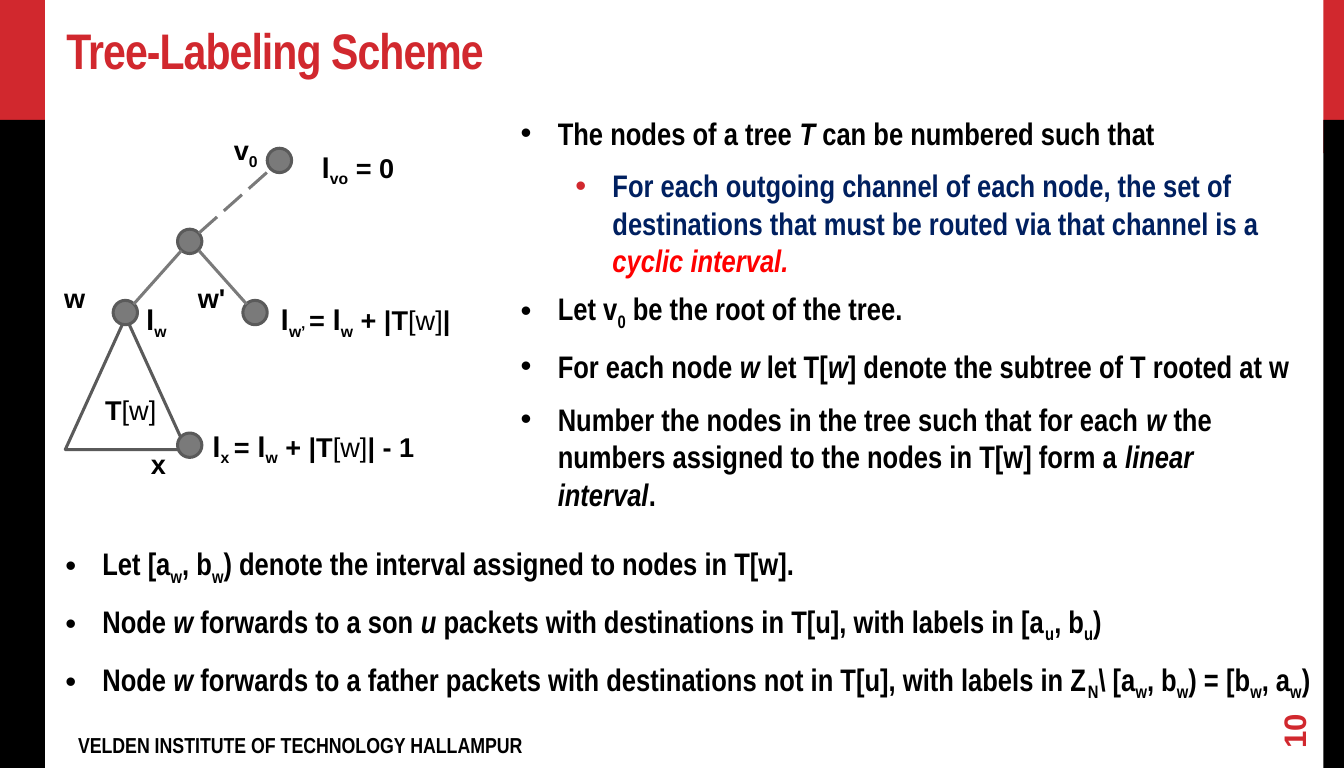
from itertools import groupby

from lxml import etree
from pptx import Presentation
from pptx.dml.color import RGBColor
from pptx.enum import dml, shapes, text
from pptx.oxml.ns import qn
from pptx.util import Inches, Pt

RED = RGBColor(0xD1, 0x28, 0x2E)
BRIGHT_RED = RGBColor(0xFF, 0x00, 0x00)
NAVY = RGBColor(0x00, 0x20, 0x60)
BLACK = RGBColor(0x00, 0x00, 0x00)
NODE_GRAY = RGBColor(0x7A, 0x7A, 0x7A)
OUTLINE_GRAY = RGBColor(0x5A, 0x5A, 0x5A)

SUBSCRIPT, ITALIC, REGULAR, NOTO, HIGHLIGHT = MARKS = "~*^@!"


def add_text_box(box, margins=(0.11, 0.06), wrap=True, anchor=text.MSO_ANCHOR.TOP):
    shape = slide.shapes.add_textbox(*map(Inches, box))
    frame = shape.text_frame
    frame.word_wrap = wrap
    frame.vertical_anchor = anchor
    frame.margin_left = frame.margin_right = Inches(margins[0])
    frame.margin_top = frame.margin_bottom = Inches(margins[1])
    return shape


def add_runs(paragraph, marked, size, font="Arial Narrow", color=BLACK):
    active = set()
    for is_mark, characters in groupby(marked, lambda character: character in MARKS):
        piece = "".join(characters)
        if is_mark:
            active ^= set(piece)
            continue
        run = paragraph.add_run()
        run.text = piece
        run.font.size = Pt(size)
        run.font.name = "Noto Sans" if NOTO in active else font
        run.font.bold = REGULAR not in active
        run.font.italic = ITALIC in active
        run.font.color.rgb = BRIGHT_RED if HIGHLIGHT in active else color
        if SUBSCRIPT in active:
            run.font._element.set("baseline", "-25000")


presentation = Presentation()
presentation.slide_width = Pt(992.25)
presentation.slide_height = Pt(567)
slide = presentation.slides.add_slide(presentation.slide_layouts[6])

for left, width in ((13.57, 0.22), (0, 0.46)):
    for top, height, color in ((0, 1.57, RED), (1.23, 6.65, BLACK)):
        band = slide.shapes.add_shape(
            shapes.MSO_SHAPE.RECTANGLE, *map(Inches, (left, top, width, height)))
        band.shadow.inherit = False
        band.fill.solid()
        band.fill.fore_color.rgb = color
        band.line.fill.background()

title = add_text_box((0.57, 0.18, 12.86, 0.7), anchor=text.MSO_ANCHOR.BOTTOM)
add_runs(title.text_frame.paragraphs[0], "Tree-Labeling Scheme", 36.9, color=RED)
title.text_frame.paragraphs[0].runs[0].font._element.set("spc", "-70")

footer = add_text_box((0.69, 7.44, 8.38, 0.34))
add_runs(footer.text_frame.paragraphs[0], "VELDEN INSTITUTE OF TECHNOLOGY HALLAMPUR", 16)

page_number = add_text_box((12.86, 7.21, 0.81, 0.34), anchor=text.MSO_ANCHOR.MIDDLE)
page_number.rotation = 270
add_runs(page_number.text_frame.paragraphs[0], "10", 23, "Arial", RED)

subtree = slide.shapes.add_shape(
    shapes.MSO_SHAPE.ISOSCELES_TRIANGLE, *map(Inches, (0.67, 3.25, 1.24, 1.36)))
subtree.shadow.inherit = False
subtree.fill.background()
subtree.line.color.rgb = OUTLINE_GRAY
subtree.line.width = Pt(2.25)

for left, top in ((2.74, 1.52), (1.82, 2.35), (1.16, 3.08), (2.49, 3.08), (1.82, 4.44)):
    node = slide.shapes.add_shape(
        shapes.MSO_SHAPE.OVAL, *map(Inches, (left, top, 0.25, 0.25)))
    node.shadow.inherit = False
    node.fill.solid()
    node.fill.fore_color.rgb = NODE_GRAY
    node.line.color.rgb = OUTLINE_GRAY
    node.line.width = Pt(2.25)

for ends, dash in (
    ((1.37, 3.12, 1.86, 2.57), None),
    ((2.04, 2.39, 2.78, 1.73), dml.MSO_LINE.LONG_DASH),
    ((2.53, 3.12, 2.04, 2.57), None),
):
    edge = slide.shapes.add_connector(shapes.MSO_CONNECTOR.STRAIGHT, *map(Inches, ends))
    edge.line.color.rgb = NODE_GRAY
    edge.line.width = Pt(2.25)
    edge.line.dash_style = dash
    etree.SubElement(edge._element.spPr, qn("a:effectLst"))

for left, top, width, label in (
    (2.3, 1.32, 0.46, "v~0~"),
    (3.2, 1.5, 0.99, "@l@~vo~ = 0"),
    (0.56, 2.84, 0.42, "w"),
    (1.93, 2.84, 0.49, "w'"),
    (1.4, 3.06, 0.44, "@l@~w~"),
    (2.78, 3.06, 2.02, "@l@~w’ ~= @l@~w~ + |T^[w]^|"),
    (0.98, 3.99, 0.73, "T^[w]^"),
    (2.08, 4.36, 2.32, "@l@~x ~= @l@~w~ + |T^[w]^| - 1"),
    (1.45, 4.54, 0.36, "x"),
):
    label_box = add_text_box((left, top, width, 0.44), (0.1, 0.05), wrap=False)
    add_runs(label_box.text_frame.paragraphs[0], label, 20, "Arial")

bullet_blocks = (
    ((5.23, 2.91, 8.14, 3.7), (
        (0, "Let v~0~ be the root of the tree."),
        (0, "For each node *w* let T[*w*] denote the subtree of T rooted at w"),
        (0, "Number the nodes in the tree such that for each *w *the numbers "
            "assigned to the nodes in T[w] form a *linear interval*."),
    )),
    ((5.23, 1.11, 7.86, 2.07), (
        (0, "The nodes of a tree *T *can be numbered such that"),
        (1, "For each outgoing channel of each node, the set of destinations "
            "that must be routed via that channel is a *!cyclic interval.!*"),
    )),
    ((0.56, 5.52, 13.22, 1.91), (
        (0, "Let [a~w~, b~w~) denote the interval assigned to nodes in T[w]."),
        (0, "Node *w* forwards to a son *u* packets with destinations in T[u], "
            "with labels in [a~u~, b~u~)"),
        (0, "Node *w* forwards to a father packets with destinations not in T[u], "
            "with labels in Z~N~\\ [a~w~, b~w~) = [b~w~, a~w~)"),
    )),
)
for box, items in bullet_blocks:
    frame = add_text_box(box).text_frame
    for index, (level, marked) in enumerate(items):
        paragraph = frame.add_paragraph() if index else frame.paragraphs[0]
        paragraph.level = level
        paragraph.space_before = Pt(4.6)
        paragraph.space_after = Pt(0 if level else 6.8)
        add_runs(paragraph, marked, 23, color=NAVY if level else BLACK)
        properties = paragraph._p.get_or_add_pPr()
        properties.set("marL", str(Inches(0.94 if level else 0.38)))
        properties.set("indent", str(Inches(-0.38)))
        bullet_color = etree.SubElement(properties, qn("a:buClr"))
        etree.SubElement(bullet_color, qn("a:srgbClr"), val=str(RED if level else BLACK))
        etree.SubElement(properties, qn("a:buFont"), typeface="Arial")
        etree.SubElement(properties, qn("a:buChar"), char="•")

presentation.save("out.pptx")
